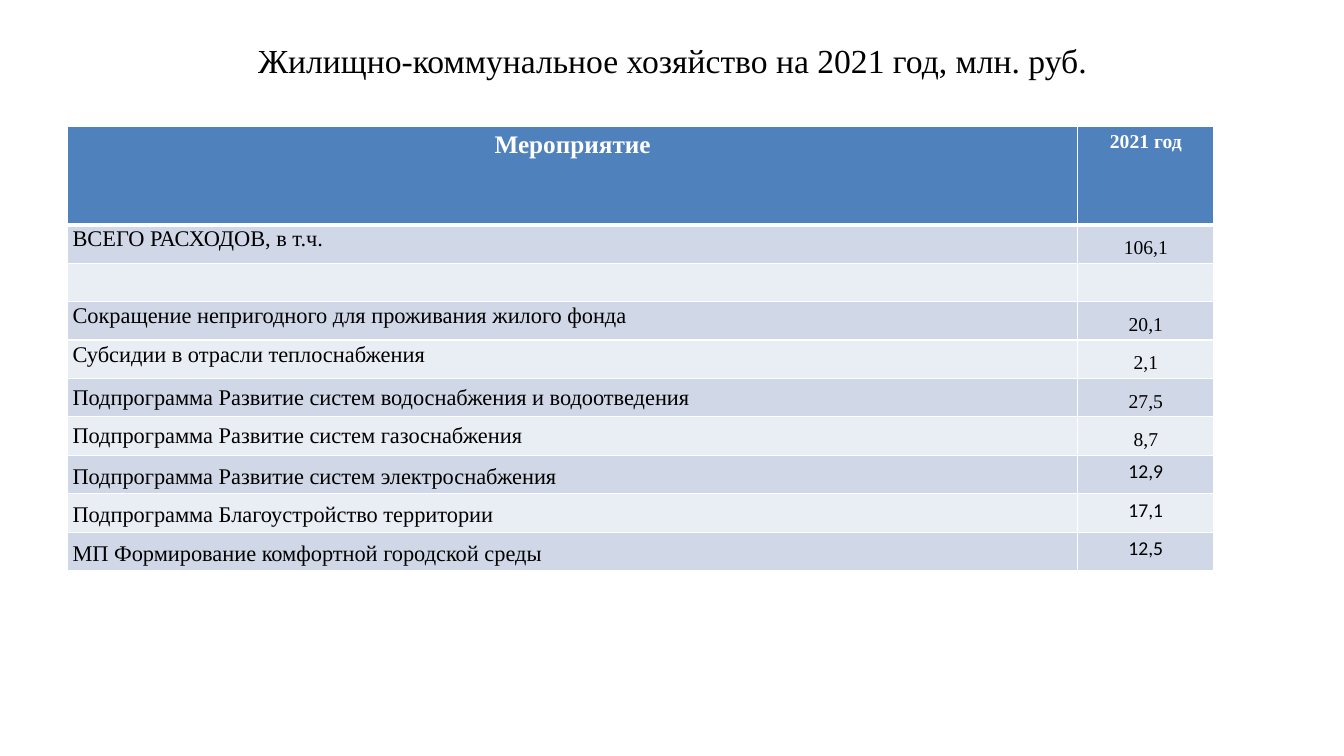
"""Builds a slide with a table of 2021 housing and utilities spending."""
from pptx import Presentation
from pptx.dml.color import RGBColor as RGB
from pptx.enum.text import MSO_ANCHOR as Anchor, PP_ALIGN as Align
from pptx.oxml import parse_xml
from pptx.oxml.ns import nsdecls
from pptx.util import Inches, Pt

TITLE = "Жилищно-коммунальное хозяйство на 2021 год, млн. руб."
HEADER = ("Мероприятие", "2021 год")
ROWS = [
    ("ВСЕГО РАСХОДОВ, в т.ч.", "106,1", "tight", "low"),
    ("", "", "plain", "plain"),
    ("Сокращение непригодного для проживания жилого фонда", "20,1", "tight", "low"),
    ("Субсидии в отрасли теплоснабжения", "2,1", "tight", "low"),
    ("Подпрограмма Развитие систем водоснабжения и водоотведения", "27,5", "middle", "low"),
    ("Подпрограмма Развитие систем газоснабжения", "8,7", "middle", "low"),
    ("Подпрограмма Развитие систем электроснабжения", "12,9", "low", "plain"),
    ("Подпрограмма Благоустройство территории", "17,1", "low", "plain"),
    ("МП Формирование комфортной городской среды", "12,5", "low", "plain"),
]
THEME = {
    "serif": "Times New Roman", "sans": "Calibri",
    "text": "000000", "white": "FFFFFF", "header": "4F81BD",
    "bands": ("D0D8E8", "E9EDF4"),
    "title": 24, "head_sizes": (18, 14), "body_sizes": (16, 14),
    "line": 1, "header_line": 3,
}
PLACEMENTS = {
    "tight": (Anchor.MIDDLE, 0.05, 0, 11),
    "middle": (Anchor.MIDDLE, 0.05, 0, None),
    "low": (Anchor.TOP, 0.05, 0.17, 12),
    "plain": (Anchor.TOP, 0.1, 0.05, None),
}
LEFT, TOP, HEIGHT, HEADER_HEIGHT = 0.67, 1.25, 4.41, 0.98
COLUMNS = (10.02, 1.35)


def write(tf, text, size, font, color, align, bold=False, spacing=None):
    p = tf.paragraphs[0]
    p.text, p.alignment = text, align
    p.font.size, p.font.name, p.font.bold = Pt(size), font, bold
    p.font.color.rgb = RGB.from_string(color)
    if spacing:
        p.line_spacing = Pt(spacing)


def style_cell(cell, fill, placement, top_line, bottom_line):
    anchor, side, top, _ = PLACEMENTS[placement]
    cell.vertical_anchor = anchor
    cell.margin_left = cell.margin_right = Inches(side)
    cell.margin_top, cell.margin_bottom = Inches(top), 0
    widths = {"L": THEME["line"], "R": THEME["line"], "T": top_line, "B": bottom_line}
    pr = cell._tc.get_or_add_tcPr()
    for edge, width in widths.items():
        pr.append(parse_xml(
            f'<a:ln{edge} {nsdecls("a")} w="{Pt(width)}"><a:solidFill>'
            f'<a:srgbClr val="{THEME["white"]}"/></a:solidFill></a:ln{edge}>'))
    cell.fill.solid()
    cell.fill.fore_color.rgb = RGB.from_string(fill)


def add_title(slide):
    tf = slide.shapes.add_textbox(Inches(LEFT), Inches(0.3), Inches(12), Inches(0.6)).text_frame
    tf.word_wrap, tf.vertical_anchor = True, Anchor.MIDDLE
    write(tf, TITLE, THEME["title"], THEME["serif"], THEME["text"], Align.CENTER)


def add_spending_table(slide):
    table = slide.shapes.add_table(
        len(ROWS) + 1, len(COLUMNS), Inches(LEFT), Inches(TOP),
        Inches(sum(COLUMNS)), Inches(HEIGHT)).table
    table.first_row = table.horz_banding = False
    for column, width in zip(table.columns, COLUMNS):
        column.width = Inches(width)
    for row in table.rows:
        row.height = Inches((HEIGHT - HEADER_HEIGHT) / len(ROWS))
    table.rows[0].height = Inches(HEADER_HEIGHT)

    thin, thick = THEME["line"], THEME["header_line"]
    for c, text in enumerate(HEADER):
        cell = table.cell(0, c)
        style_cell(cell, THEME["header"], "plain", thin, thick)
        write(cell.text_frame, text, THEME["head_sizes"][c], THEME["serif"],
              THEME["white"], Align.CENTER, bold=True)
    for r, (name, value, *placements) in enumerate(ROWS, 1):
        for c, (text, placement) in enumerate(zip((name, value), placements)):
            cell = table.cell(r, c)
            style_cell(cell, THEME["bands"][(r - 1) % 2], placement,
                       thick if r == 1 else thin, thin)
            write(cell.text_frame, text, THEME["body_sizes"][c],
                  THEME["sans" if placement == "plain" else "serif"], THEME["text"],
                  (Align.LEFT, Align.CENTER)[c], spacing=PLACEMENTS[placement][3])


def main():
    prs = Presentation()
    prs.slide_width, prs.slide_height = Inches(13.33), Inches(7.5)
    slide = prs.slides.add_slide(prs.slide_layouts[6])
    add_title(slide)
    add_spending_table(slide)
    prs.save("out.pptx")


if __name__ == "__main__":
    main()
